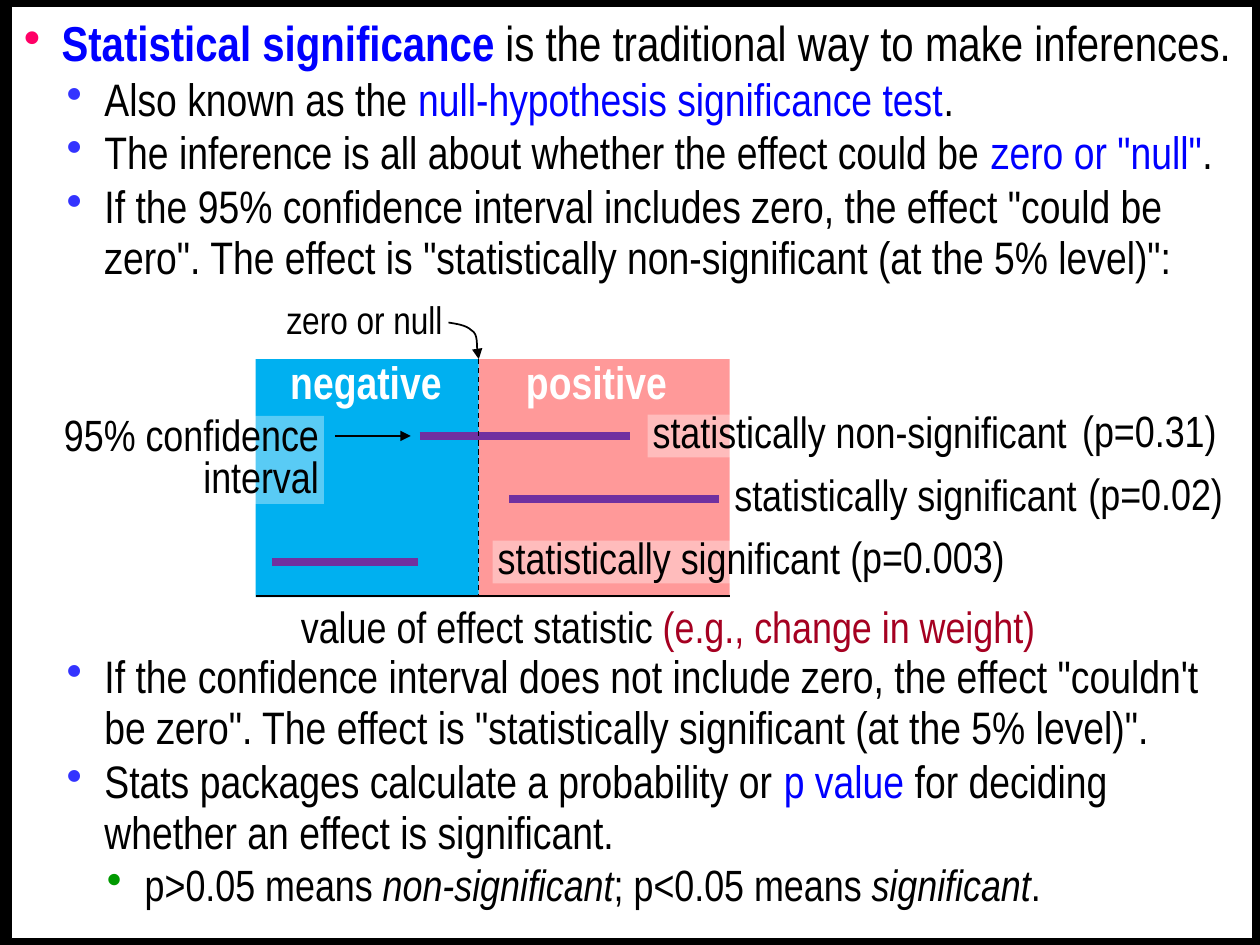
import lxml.etree
import pptx
import pptx.dml.color
import pptx.enum.dml
import pptx.enum.shapes
import pptx.enum.text
import pptx.oxml
import pptx.oxml.ns
import pptx.util

COLORS = {
    "black": "000000", "white": "FFFFFF", "blue": "0000FF", "pink": "FF9999",
    "sky": "00B0F0", "purple": "7030A0", "crimson": "A50021",
    "bullet0": "FF0066", "bullet1": "3333FF", "bullet2": "009900",
}
FONT = "Arial Narrow"
COLUMNS, ROWS = 1000, 750
LEVELS = [(30, 28), (64, 26), (96, 25)]
HANGING = 30
FIGURE_GAP = 210

KEY = {"color": "blue"}
BOLD_KEY = {"color": "blue", "bold": True}
ITALIC = {"italic": True}
BULLETS = [
    (0, 1.4, [("Statistical significance ", BOLD_KEY),
              ("is the traditional way to make inferences.", {})]),
    (1, 1.3, [("Also known as the ", {}), ("null-hypothesis significance test", KEY), (".", {})]),
    (1, 1.3, [("The inference is all about whether the effect could be ", {}),
              ('zero or "null"', KEY), (".", {})]),
    (1, 1.3, [('If the 95% confidence interval includes zero, the effect "could be zero". '
               'The effect is "statistically non-significant (at the 5% level)":', {})]),
    (1, FIGURE_GAP, [('If the confidence interval does not include zero, the effect "couldn\'t be zero". '
                      'The effect is "statistically significant (at the 5% level)".', {})]),
    (1, 1.3, [("Stats packages calculate a probability or ", {}), ("p value", KEY),
              (" for deciding whether an effect is significant.", {})]),
    (2, 1.3, [("p>0.05 means ", {}), ("non-significant", ITALIC),
              ("; p<0.05 means ", {}), ("significant", ITALIC), (".", {})]),
]

PLOT_LEFT, ZERO, PLOT_RIGHT = 203, 380, 579
PLOT_TOP, PLOT_BOTTOM = 285, 474
FIRST_INTERVAL, INTERVAL_STEP = 346, 50
SIDES = [
    ("positive", ZERO, PLOT_RIGHT, "pink", 415, 117),
    ("negative", PLOT_LEFT, ZERO, "sky", 228, 125),
]
INTERVALS = [
    (333, 500, "statistically non-significant", 514, 340, True, "(p=0.31)", 849, 128),
    (404, 571, "statistically significant", 573, 295, False, "(p=0.02)", 854, 128),
    (216, 332, "statistically significant", 391, 282, True, "(p=0.003)", 665, 144),
]
POINTER = [
    [(380, 285), (380, 284), (380, 282), (379, 278)],
    [(379, 278), (378, 275), (380, 265), (374, 262)],
    [(374, 262), (370, 258), (362, 257), (356, 256)],
]

deck = pptx.Presentation()
deck.slide_width, deck.slide_height = pptx.util.Inches(10), pptx.util.Inches(7.5)
page = deck.slides.add_slide(deck.slide_layouts[6])
RECTANGLE = pptx.enum.shapes.MSO_SHAPE.RECTANGLE
ALIGN = pptx.enum.text.PP_ALIGN
ANCHOR = pptx.enum.text.MSO_ANCHOR
GROW = pptx.enum.text.MSO_AUTO_SIZE.SHAPE_TO_FIT_TEXT


def across(columns):
    return round(deck.slide_width * columns / COLUMNS)


def down(rows):
    return round(deck.slide_height * rows / ROWS)


def color(name):
    return pptx.dml.color.RGBColor.from_string(COLORS[name])


def assign(target, values):
    for name, value in values.items():
        setattr(target, name, value)


def child(parent, tag, **attributes):
    return lxml.etree.SubElement(parent, pptx.oxml.ns.qn(tag), attributes)


def paint(shape, fill, alpha=None):
    shape.fill.solid()
    shape.fill.fore_color.rgb = color(fill)
    if alpha:
        tint = shape.fill._xPr.find(".//" + pptx.oxml.ns.qn("a:srgbClr"))
        child(tint, "a:alpha", val=str(alpha * 1000))


def rectangle(left, top, width, height, fill):
    box = page.shapes.add_shape(RECTANGLE, across(left), down(top), across(width), down(height))
    box.shadow.inherit = False
    paint(box, fill)
    box.line.fill.background()
    return box


def write(para, text, size, style):
    span = para.add_run()
    span.text = text
    format_values = {"name": FONT, "size": pptx.util.Pt(size), "bold": False, **style}
    span.font.fill.solid()
    span.font.fill.fore_color.rgb = color(format_values.pop("color", "black"))
    assign(span.font, format_values)
    return span


def label(left, middle, width, height, spans, size=25, align=ALIGN.LEFT,
          inset=(10, 5), tinted=False, wrap=False):
    box = page.shapes.add_textbox(across(left), down(middle - height / 2), across(width), down(height))
    if tinted:
        paint(box, "white", 35)
    assign(box.text_frame, {
        "word_wrap": wrap, "auto_size": GROW, "vertical_anchor": ANCHOR.MIDDLE,
        "margin_left": across(inset[0]), "margin_right": across(inset[0]),
        "margin_top": down(inset[1]), "margin_bottom": down(inset[1]),
    })
    para = box.text_frame.paragraphs[0]
    assign(para, {"alignment": align, "line_spacing": 0.8})
    return [write(para, text, size, style) for text, style in spans]


def stroke(shape, name, weight, arrow=None, dash=None):
    shape.line.color.rgb = color(name)
    shape.line.width = pptx.util.Pt(weight)
    if dash:
        shape.line.dash_style = dash
    if arrow:
        child(shape.line._get_or_add_ln(), arrow, type="triangle")


def connect(start, end, name, weight, **options):
    line = page.shapes.add_connector(
        pptx.enum.shapes.MSO_CONNECTOR.STRAIGHT,
        across(start[0]), down(start[1]), across(end[0]), down(end[1]))
    stroke(line, name, weight, **options)
    child(line._element.spPr, "a:effectLst")


def cast_shadow(span):
    effects = pptx.oxml.parse_xml(
        f'<a:effectLst {pptx.oxml.ns.nsdecls("a")}><a:outerShdw dist="38100" dir="2700000">'
        f'<a:srgbClr val="{COLORS["black"]}"/></a:outerShdw></a:effectLst>')
    span.font._element.find(pptx.oxml.ns.qn("a:solidFill")).addnext(effects)


def curve_points(segments, steps=8):
    for a, b, c, d in segments:
        for step in range(1, steps + 1):
            t = step / steps
            weights = ((1 - t) ** 3, 3 * t * (1 - t) ** 2, 3 * t * t * (1 - t), t ** 3)
            x, y = (sum(w * p[axis] for w, p in zip(weights, (a, b, c, d))) for axis in (0, 1))
            yield across(x), down(y)


def add_body():
    panel = rectangle(9, 5, 985, 740, "white")
    stroke(panel, "black", 0.75)
    frame = panel.text_frame
    assign(frame, {
        "word_wrap": True, "vertical_anchor": ANCHOR.TOP, "margin_left": across(10),
        "margin_right": across(10), "margin_top": down(9), "margin_bottom": down(5),
    })
    for index, (level, before, spans) in enumerate(BULLETS):
        para = frame.add_paragraph() if index else frame.paragraphs[0]
        indent, size = LEVELS[level]
        assign(para, {"alignment": ALIGN.LEFT, "level": level, "line_spacing": 0.94,
                      "space_before": pptx.util.Pt(before)})
        properties = para._p.get_or_add_pPr()
        properties.set("marL", str(across(indent)))
        properties.set("indent", str(-across(HANGING)))
        child(child(properties, "a:buClr"), "a:srgbClr", val=COLORS[f"bullet{level}"])
        child(properties, "a:buChar", char="•")
        for text, style in spans:
            write(para, text, size, style)


def add_figure():
    for name, left, right, fill, text_left, text_width in SIDES:
        rectangle(left, PLOT_TOP, right - left, PLOT_BOTTOM - PLOT_TOP, fill)
        heading = label(text_left, 307, text_width, 35, [(name, {"color": "white", "bold": True})],
                        size=26, align=ALIGN.CENTER, inset=(2, 0))
        cast_shadow(heading[0])
    label(35, 365, 222, 70, [("95% confidence interval", {})],
          align=ALIGN.RIGHT, inset=(4, 0), tinted=True, wrap=True)
    connect((266, FIRST_INTERVAL), (326, FIRST_INTERVAL), "black", 1, arrow="a:tailEnd")
    for index, (start, end, verdict, left, width, tinted, chance, chance_left, chance_width) in enumerate(INTERVALS):
        middle = FIRST_INTERVAL + index * INTERVAL_STEP
        connect((start, middle), (end, middle), "purple", 4.5)
        label(left, middle, width, 34 if tinted else 44, [(verdict, {})],
              inset=(4, 0) if tinted else (10, 5), tinted=tinted)
        label(chance_left, middle - 0.5, chance_width, 44, [(chance, {})])
    connect((PLOT_LEFT, PLOT_BOTTOM - 1), (PLOT_RIGHT, PLOT_BOTTOM - 1), "black", 0.75)
    connect((ZERO, PLOT_TOP), (ZERO, PLOT_BOTTOM), "black", 0.75,
            dash=pptx.enum.dml.MSO_LINE.DASH)
    label(229, 501, 610, 44, [("value of effect statistic", {}),
                              (" (e.g., change in weight)", {"color": "crimson"})])
    label(216, 257, 145, 40, [("zero or null", {})], size=22, align=ALIGN.RIGHT)
    builder = page.shapes.build_freeform(across(ZERO), down(PLOT_TOP))
    builder.add_line_segments(list(curve_points(POINTER)), close=False)
    pointer = builder.convert_to_shape()
    pointer.shadow.inherit = False
    pointer.fill.background()
    stroke(pointer, "black", 1, arrow="a:headEnd")


page.background.fill.solid()
page.background.fill.fore_color.rgb = color("black")
add_body()
add_figure()
deck.save("out.pptx")
